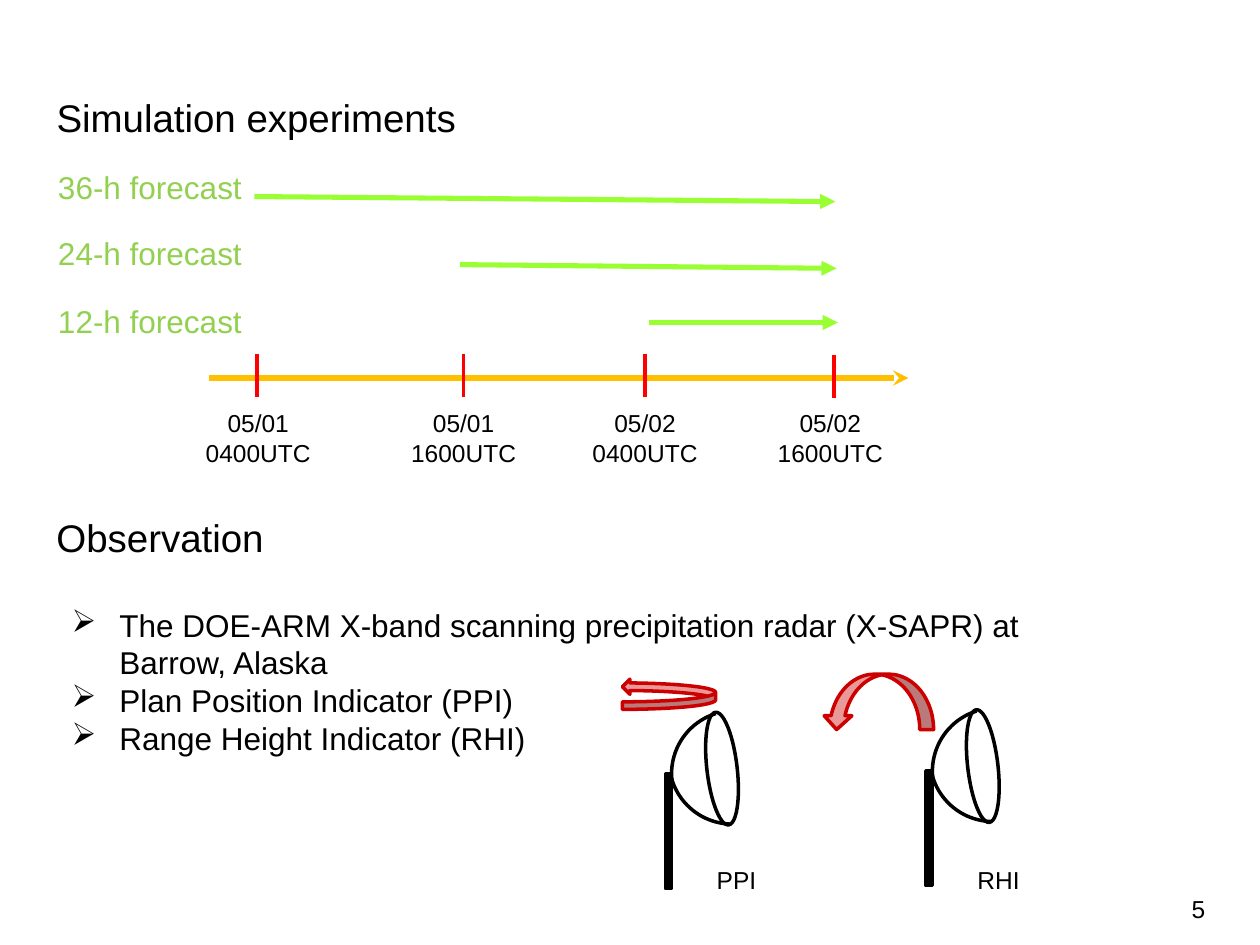
from pptx import Presentation
from pptx.dml.color import RGBColor
from pptx.enum import shapes, text
from pptx.oxml.ns import qn
from pptx.util import Inches, Pt
from lxml import etree

BLACK, GREEN, LIME, GOLD, RED = "000000", "92D050", "99FF33", "FFC000", "FF0000"
PINK, DARK_RED, WHITE = "EA9999", "CC0000", "FFFFFF"

# Content: label, label top, arrow start and end
FORECASTS = [
    ("36-h forecast", 1.29, (2.02, 1.56), (6.63, 1.6)),
    ("24-h forecast", 1.82, (3.65, 2.1), (6.64, 2.13)),
    ("12-h forecast", 2.36, (5.15, 2.56), (6.65, 2.56)),
]
# Date, time, label centre, tick x, tick top
TIMES = [
    ("05/01", "0400UTC", 2.05, 2.04, 2.81),
    ("05/01", "1600UTC", 3.68, 3.68, 2.81),
    ("05/02", "0400UTC", 5.12, 5.12, 2.81),
    ("05/02", "1600UTC", 6.59, 6.62, 2.82),
]
OBSERVATIONS = [
    "The DOE-ARM X-band scanning precipitation radar (X-SAPR) at Barrow, Alaska",
    "Plan Position Indicator (PPI)",
    "Range Height Indicator (RHI)",
]
# Name, dish origin, scan arrow box, scan arrow rotation
RADARS = [
    ("PPI", (5.28, 5.54), (4.94, 5.39, 0.74, 0.24), 180),
    ("RHI", (7.35, 5.52), (6.75, 5.13, 0.44, 0.88), 90),
]

prs = Presentation()
prs.slide_width, prs.slide_height = Inches(10), Inches(7.5)
s = prs.slides.add_slide(prs.slide_layouts[6])


def rgb(color):
    return RGBColor.from_string(color)


def add_text(box, lines, size, color=BLACK, inset=(0.1, 0.1), align=None, wrap=False):
    tf = s.shapes.add_textbox(*map(Inches, box)).text_frame
    tf.word_wrap = wrap
    tf.margin_left = tf.margin_right = Inches(inset[0])
    tf.margin_top = tf.margin_bottom = Inches(inset[1])
    tf.text = "\n".join(lines)
    for p in tf.paragraphs:
        p.alignment = align
        for r in p.runs:
            r.font.name, r.font.size = "Arial", Pt(size)
            r.font.color.rgb = rgb(color)
    return tf


def add_line(start, end, color, width, head=None):
    line = s.shapes.add_connector(
        shapes.MSO_CONNECTOR.STRAIGHT, *map(Inches, start + end))
    line.line.color.rgb = rgb(color)
    line.line.width = Pt(width)
    if head:
        etree.SubElement(line.line._get_or_add_ln(), qn("a:tailEnd"), type=head)
    etree.SubElement(line._element.spPr, qn("a:effectLst"))


def add_part(kind, box, fill=None, line=BLACK, rotation=0, adjust=(), flip=False):
    sp = s.shapes.add_shape(kind, *map(Inches, box))
    sp.shadow.inherit = False
    sp.rotation = rotation
    for i, value in enumerate(adjust):
        sp.adjustments[i] = value
    if fill:
        sp.fill.solid()
        sp.fill.fore_color.rgb = rgb(fill)
    else:
        sp.fill.background()
    sp.line.color.rgb = rgb(line)
    sp.line.width = Pt(2)
    if flip:
        sp._element.spPr.find(qn("a:xfrm")).set("flipH", "1")


def add_radar(name, origin, arrow_box, arrow_rotation):
    x, y = origin
    kind = shapes.MSO_SHAPE
    # Dish: rim and two arcs of the bowl
    add_part(kind.OVAL, (x, y + 0.44, 0.9, 0.24), WHITE, rotation=83.4)
    add_part(kind.ARC, (x + 0.05, y + 0.1, 1, 1), rotation=252.6, adjust=(165.08, 0))
    add_part(kind.ARC, (x + 0.03, y, 1, 1), rotation=177.2, adjust=(165.08, 211.36))
    # Pole and scan direction
    add_part(kind.RECTANGLE, (x, y + 0.6, 0.05, 0.91), BLACK)
    add_part(kind.CURVED_LEFT_ARROW, arrow_box, PINK, DARK_RED, arrow_rotation,
             (0.25, 0.5, 0.25), flip=True)
    add_text((x + 0.31, 6.82, 0.54, 0.34), [name], 14, inset=(0.1, 0.05))


# Time axis
add_line((1.66, 3), (7.21, 3), GOLD, 3, "stealth")
for date, time, centre, tick, top in TIMES:
    add_line((tick, top), (tick, top + 0.34), RED, 2)
    add_text((centre - 0.55, 3.2, 1.1, 0.63), [date, time], 14,
             inset=(0.07, 0.04), align=text.PP_ALIGN.CENTER)

# Forecast spans
for label, top, start, end in FORECASTS:
    add_text((0.39, top, 1.65, 0.45), [label], 18, GREEN, (0.07, 0.04))
    add_line(start, end, LIME, 2.89, "triangle")

# Headings and bullets
add_text((0.35, 0.65, 6.28, 0.73), ["Simulation experiments"], 22, wrap=True)
tf = add_text((0.35, 3.98, 8.56, 0.73), ["Observation"] + OBSERVATIONS, 18, wrap=True)
heading, *bullets = tf.paragraphs
heading.runs[0].font.size = Pt(22)
bullets[0].space_before = Pt(26)
for p in bullets:
    pPr = p._p.get_or_add_pPr()
    pPr.set("marL", str(Inches(0.5)))
    pPr.set("indent", str(Inches(-0.38)))
    color = etree.SubElement(pPr, qn("a:buClr"))
    etree.SubElement(color, qn("a:srgbClr"), val=BLACK)
    etree.SubElement(pPr, qn("a:buChar"), char="➢")

# Radars
for radar in RADARS:
    add_radar(*radar)

# Page number
tf = add_text((9.36, 6.93, 0.6, 0.57), ["5"], 14, wrap=True)
tf.vertical_anchor = text.MSO_ANCHOR.MIDDLE

prs.save("out.pptx")
